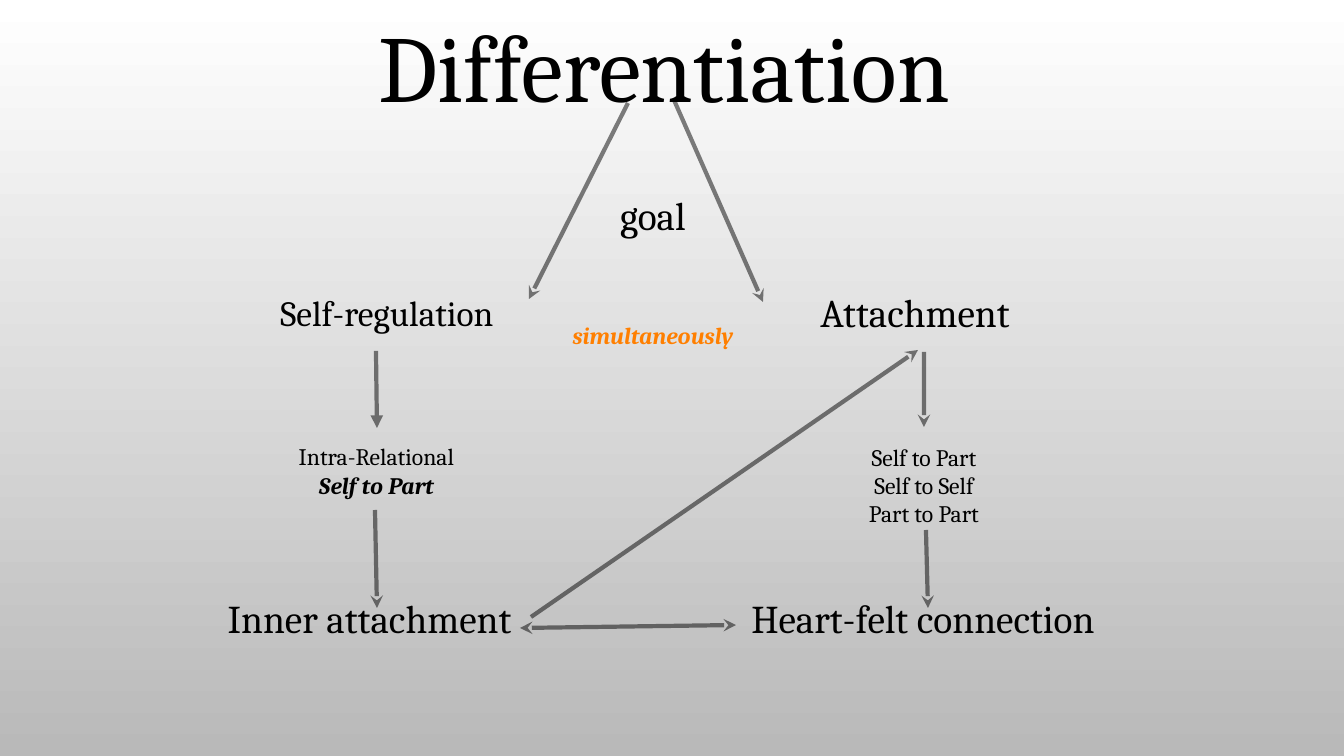
import dataclasses

import lxml.etree
import pptx
import pptx.dml.color
import pptx.enum.shapes
import pptx.enum.text
import pptx.oxml.ns
import pptx.util

SCALE = 914400 / 100.8


@dataclasses.dataclass(frozen=True)
class Theme:
    """Hold the colours, font and type sizes."""
    font: str = "Cambria"
    ink: str = "000000"
    accent: str = "FF7F00"
    top: str = "FFFFFF"
    base: str = "B9B9B9"
    title: float = 67.5
    large: float = 28.1
    medium: float = 25.3
    small: float = 16.9
    line: float = 3


THEME = Theme()


def px(num):
    """Turn pixels into EMU."""
    return pptx.util.Emu(round(num * SCALE))


def color(code):
    """Return the colour for a hex code."""
    return pptx.dml.color.RGBColor.from_string(code)


def label(slide, box, spot, text, size, tint=THEME.ink, strong=None, wrap=False):
    """Add centred text at a spot in the box, with one line perhaps bold italic."""
    left, top, width, height = spot
    shape = slide.shapes.add_textbox(px(box[0] + left), px(box[1] + top), px(width), px(height))
    frame = shape.text_frame
    frame.text = text
    frame.word_wrap = wrap
    if not wrap:
        frame.auto_size = pptx.enum.text.MSO_AUTO_SIZE.SHAPE_TO_FIT_TEXT
    frame.vertical_anchor = pptx.enum.text.MSO_ANCHOR.MIDDLE
    frame.margin_left = frame.margin_right = frame.margin_top = frame.margin_bottom = 0
    for index, para in enumerate(frame.paragraphs):
        para.alignment = pptx.enum.text.PP_ALIGN.CENTER
        for run in para.runs:
            run.font.name = THEME.font
            run.font.size = pptx.util.Pt(size)
            run.font.color.rgb = color(tint)
            if index == strong:
                run.font.bold = run.font.italic = True


def arrow(slide, box, tip, root, head="stealth", both=False):
    """Draw a half-clear arrow whose head is at the tip, or at both ends."""
    ends = [px(a + b) for point in (tip, root) for a, b in zip(box, point)]
    line = slide.shapes.add_connector(pptx.enum.shapes.MSO_CONNECTOR.STRAIGHT, *ends)
    line.line.width = pptx.util.Pt(THEME.line)
    line.line.color.rgb = color(THEME.ink)
    qn = pptx.oxml.ns.qn
    props = line._element.spPr
    tone = next(props.iter(qn("a:srgbClr")))
    lxml.etree.SubElement(tone, qn("a:alpha"), val="50000")
    stroke = props.find(qn("a:ln"))
    for tag in ("a:headEnd", "a:tailEnd") if both else ("a:headEnd",):
        lxml.etree.SubElement(stroke, qn(tag), type=head)
    lxml.etree.SubElement(props, qn("a:effectLst"))


def backdrop(slide):
    """Fill the background from light to grey, top to bottom."""
    fill = slide.background.fill
    fill.gradient()
    fill.gradient_angle = 270
    for stop, place, code in zip(fill.gradient_stops, (0, 1), (THEME.top, THEME.base)):
        stop.position = place
        stop.color.rgb = color(code)


def summit(slide, box):
    """Place the title, the goal and the two arrows that part from it."""
    label(slide, box, (0, 0, 620, 115), "Differentiation", THEME.title)
    label(slide, box, (261, 184, 76, 47), "goal", THEME.large)
    arrow(slide, box, (175, 292), (274, 96))
    arrow(slide, box, (409, 295), (320, 93))


def column(slide, box, labels, arrows):
    """Place one chain of labels and the arrows that join them."""
    for item in labels:
        label(slide, box, **item)
    for item in arrows:
        arrow(slide, box, **item)


def bridge(slide, box):
    """Place the middle word and the arrows between the columns."""
    label(slide, box, (29, 0, 208, 39), "simultaneously", THEME.small,
          tint=THEME.accent, strong=0, wrap=True)
    arrow(slide, box, (398, 34), (11, 301))
    arrow(slide, box, (0, 312), (216, 309), both=True)


def main():
    """Build and save the slide."""
    deck = pptx.Presentation()
    deck.slide_width, deck.slide_height = px(1344), px(756)
    slide = deck.slides.add_slide(deck.slide_layouts[6])
    backdrop(slide)
    summit(slide, (354, 7))
    column(slide, (219, 282), [
        dict(spot=(29, 3, 278, 55), text="Self-regulation", size=THEME.medium, wrap=True),
        dict(spot=(75, 160, 165, 57), text="Intra-Relational\nSelf to Part",
             size=THEME.small, strong=1),
        dict(spot=(0, 312, 301, 47), text="Inner attachment", size=THEME.large),
    ], [
        dict(tip=(158, 146), root=(157, 69), head="triangle"),
        dict(tip=(158, 326), root=(156, 228)),
    ])
    column(slide, (737, 282), [
        dict(spot=(39, 0, 278, 60), text="Attachment", size=THEME.large, wrap=True),
        dict(spot=(127, 160, 120, 86), text="Self to Part\nSelf to Self\nPart to Part",
             size=THEME.small),
        dict(spot=(0, 312, 372, 47), text="Heart-felt connection", size=THEME.large),
    ], [
        dict(tip=(187, 145), root=(187, 70)),
        dict(tip=(191, 326), root=(189, 248)),
    ])
    bridge(slide, (520, 316))
    deck.save("out.pptx")


if __name__ == "__main__":
    main()
